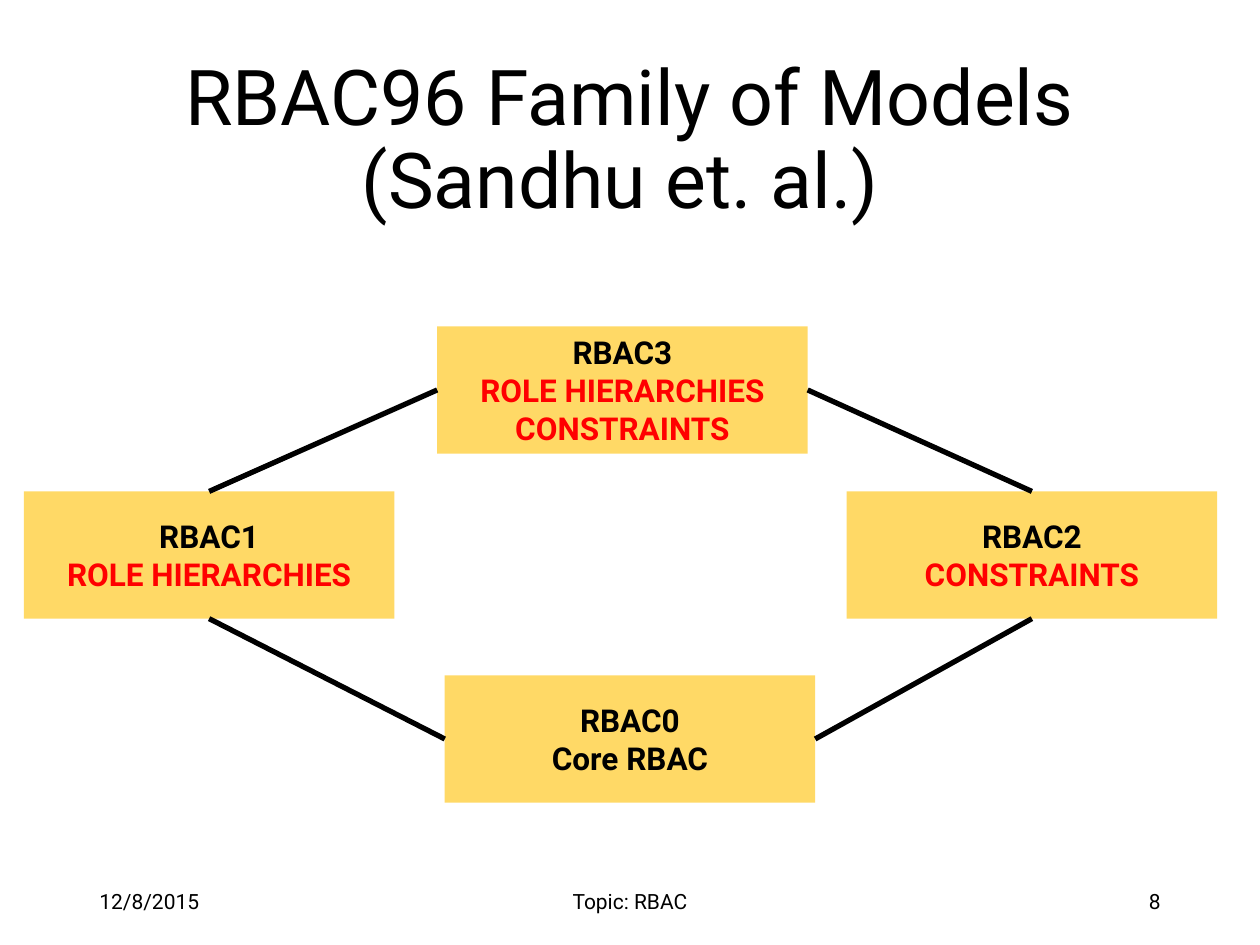
from pptx import Presentation
from pptx.dml.color import RGBColor
from pptx.enum.shapes import MSO_CONNECTOR, MSO_SHAPE
from pptx.enum.text import MSO_ANCHOR, MSO_AUTO_SIZE, PP_ALIGN
from pptx.oxml.ns import qn
from pptx.util import Inches, Pt

STRAIGHT = MSO_CONNECTOR.STRAIGHT
RECTANGLE = MSO_SHAPE.RECTANGLE
MIDDLE = MSO_ANCHOR.MIDDLE
NO_AUTOFIT = MSO_AUTO_SIZE.NONE
LEFT, CENTER, RIGHT = PP_ALIGN.LEFT, PP_ALIGN.CENTER, PP_ALIGN.RIGHT
TOP_SIDE, LEFT_SIDE, BOTTOM_SIDE, RIGHT_SIDE = range(4)
TITLE_ONLY = 5


def color(hex_code):
    return RGBColor.from_string(hex_code)


class SlideBuilder:
    font = "Roboto"
    ink = "000000"
    accent = "FF0000"
    box_fill = "FFD966"
    box_size = (2.94, 1.01)

    def __init__(self, slide):
        self.slide = slide

    def format_text(self, frame, size, align, bold=False):
        frame.word_wrap = True
        frame.auto_size = NO_AUTOFIT
        frame.vertical_anchor = MIDDLE
        for paragraph in frame.paragraphs:
            paragraph.alignment = align
            for run in paragraph.runs:
                run.font.name = self.font
                run.font.size = Pt(size)
                run.font.bold = bold
                run.font.color.rgb = color(self.ink)

    def title(self, text, left, top, width, height):
        title = self.slide.shapes.title
        title.left, title.top = Inches(left), Inches(top)
        title.width, title.height = Inches(width), Inches(height)
        title.text_frame.text = text
        self.format_text(title.text_frame, 44, CENTER)
        title.text_frame.paragraphs[0].line_spacing = 0.9

    def footer(self, text, left, width, align):
        footer = self.slide.shapes.add_textbox(
            Inches(left), Inches(6.95), Inches(width), Inches(0.4))
        footer.text_frame.text = text
        self.format_text(footer.text_frame, 12, align)

    def model(self, left, top, lines, accented=True):
        width, height = self.box_size
        box = self.slide.shapes.add_shape(
            RECTANGLE, Inches(left), Inches(top), Inches(width), Inches(height))
        box.shadow.inherit = False
        box.fill.solid()
        box.fill.fore_color.rgb = color(self.box_fill)
        box.line.fill.background()
        box.text_frame.text = "\n".join(lines)
        self.format_text(box.text_frame, 18, CENTER, bold=True)
        if accented:
            for paragraph in box.text_frame.paragraphs[1:]:
                paragraph.runs[0].font.color.rgb = color(self.accent)
        return box

    def link(self, start, start_side, end, end_side):
        line = self.slide.shapes.add_connector(STRAIGHT, 0, 0, 0, 0)
        line.begin_connect(start, start_side)
        line.end_connect(end, end_side)
        line.line.color.rgb = color(self.ink)
        line.line.width = Pt(3)
        properties = line._element.spPr
        properties.append(properties.makeelement(qn("a:effectLst"), {}))


def main():
    deck = Presentation()
    deck.slide_width, deck.slide_height = Inches(10), Inches(7.5)
    builder = SlideBuilder(deck.slides.add_slide(deck.slide_layouts[TITLE_ONLY]))

    # Title and footer
    builder.title("RBAC96 Family of Models (Sandhu et. al.) ", 0.69, 0.4, 8.62, 1.45)
    builder.footer("12/8/2015", 0.69, 2.25, LEFT)
    builder.footer("Topic: RBAC", 3.31, 3.38, CENTER)
    builder.footer("8", 7.06, 2.25, RIGHT)

    # Family of models, from the core up to the combined model
    rbac0 = builder.model(3.53, 5.36, ["RBAC0", "Core RBAC"], accented=False)
    rbac3 = builder.model(3.47, 2.59, ["RBAC3", "ROLE HIERARCHIES", "CONSTRAINTS"])
    rbac2 = builder.model(6.72, 3.9, ["RBAC2", "CONSTRAINTS"])
    rbac1 = builder.model(0.19, 3.9, ["RBAC1", "ROLE HIERARCHIES"])

    # Links between the models
    for middle, side in ((rbac1, LEFT_SIDE), (rbac2, RIGHT_SIDE)):
        builder.link(rbac3, side, middle, TOP_SIDE)
        builder.link(middle, BOTTOM_SIDE, rbac0, side)

    deck.save("out.pptx")


if __name__ == "__main__":
    main()
